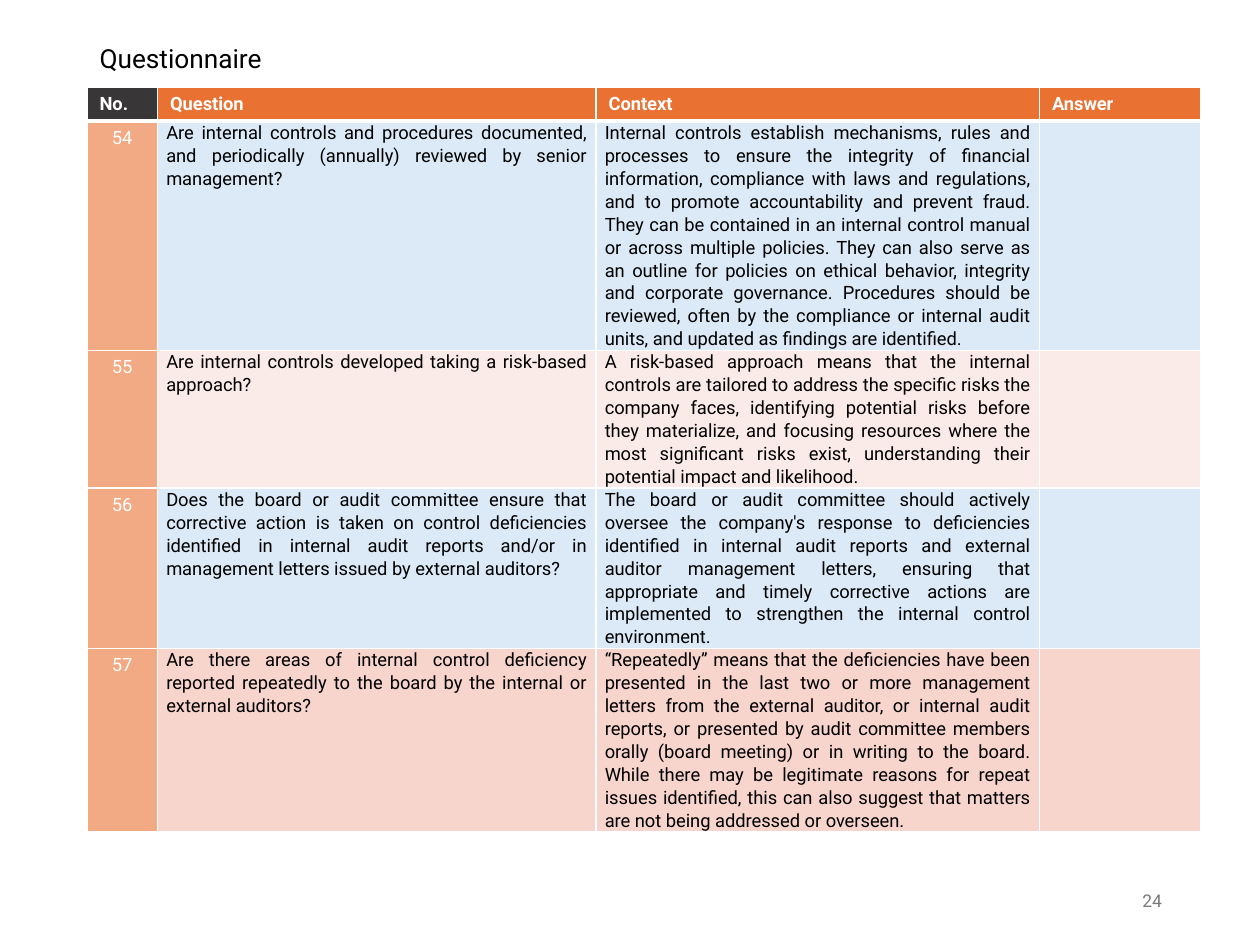
from dataclasses import dataclass

from lxml.etree import SubElement
from pptx import Presentation
from pptx.dml.color import RGBColor
from pptx.enum.text import MSO_ANCHOR as Anchor, PP_ALIGN as Align
from pptx.oxml.ns import qn
from pptx.util import Inches, Pt


@dataclass(frozen=True)
class Theme:
    font: str = "Roboto"
    title_size: float = 15
    table_size: float = 10.5
    page_size: float = 10
    black: str = "000000"
    white: str = "FFFFFF"
    gray: str = "797979"
    dark: str = "393637"
    orange: str = "E97132"
    light_orange: str = "F2AA84"
    blue: str = "DCEAF7"
    pale_rose: str = "FBEBE8"
    rose: str = "F7D5CD"


THEME = Theme()
HEADERS = ["No.", "Question", "Context", "Answer"]
COLUMN_WIDTHS = [0.56, 3.48, 3.52, 1.28]
HEADER_HEIGHT = 0.26

# Number, row height, row colour, question, context
QUESTIONS = [
    (54, 1.82, THEME.blue,
     "Are internal controls and procedures documented, and periodically (annually) "
     "reviewed by senior management?",
     "Internal controls establish mechanisms, rules and processes to ensure the integrity "
     "of financial information, compliance with laws and regulations, and to promote "
     "accountability and prevent fraud. They can be contained in an internal control manual "
     "or across multiple policies. They can also serve as an outline for policies on ethical "
     "behavior, integrity and corporate governance. Procedures should be reviewed, often by "
     "the compliance or internal audit units, and updated as findings are identified."),
    (55, 1.09, THEME.pale_rose,
     "Are internal controls developed taking a risk-based approach?",
     "A risk-based approach means that the internal controls are tailored to address the "
     "specific risks the company faces, identifying potential risks before they materialize, "
     "and focusing resources where the most significant risks exist, understanding their "
     "potential impact and likelihood."),
    (56, 1.27, THEME.blue,
     "Does the board or audit committee ensure that corrective action is taken on control "
     "deficiencies identified in internal audit reports and/or in management letters issued "
     "by external auditors?",
     "The board or audit committee should actively oversee the company's response to "
     "deficiencies identified in internal audit reports and external auditor management "
     "letters, ensuring that appropriate and timely corrective actions are implemented to "
     "strengthen the internal control environment."),
    (57, 1.45, THEME.rose,
     "Are there areas of internal control deficiency reported repeatedly to the board by the "
     "internal or external auditors?",
     "“Repeatedly” means that the deficiencies have been presented in the last two or more "
     "management letters from the external auditor, or internal audit reports, or presented "
     "by audit committee members orally (board meeting) or in writing to the board. While "
     "there may be legitimate reasons for repeat issues identified, this can also suggest "
     "that matters are not being addressed or overseen."),
]


def add_span(para, text, size, color, bold=False):
    span = para.add_run()
    span.text = text
    span.font.name = THEME.font
    span.font.size = Pt(size)
    span.font.bold = bold
    span.font.color.rgb = RGBColor.from_string(color)


def style_cell(cell, fill, bottom_width=1):
    """Give the cell white borders and a solid fill."""
    properties = cell._tc.get_or_add_tcPr()
    for side, width in (("L", 1), ("R", 1), ("T", 1), ("B", bottom_width)):
        line = SubElement(properties, qn(f"a:ln{side}"), w=str(Pt(width)))
        solid = SubElement(line, qn("a:solidFill"))
        SubElement(solid, qn("a:srgbClr"), val=THEME.white)
    cell.fill.solid()
    cell.fill.fore_color.rgb = RGBColor.from_string(fill)


def write_cell(cell, text, color, align=Align.LEFT, bold=False):
    para = cell.text_frame.paragraphs[0]
    para.alignment = align
    add_span(para, text, THEME.table_size, color, bold)
    return para


def write_body_cell(cell, text):
    """Write justified text with tight cell margins."""
    cell.margin_left = cell.margin_right = Inches(0.07)
    cell.margin_top = cell.margin_bottom = 0
    write_cell(cell, text, THEME.black, Align.JUSTIFY).line_spacing = 1.07


def add_title(page, text):
    title = page.shapes.title
    title.left, title.top = Inches(0.69), Inches(0.27)
    title.width, title.height = Inches(8.62), Inches(0.42)
    title.text_frame.vertical_anchor = Anchor.MIDDLE
    para = title.text_frame.paragraphs[0]
    para.alignment = Align.LEFT
    para.line_spacing = 0.9
    add_span(para, text, THEME.title_size, THEME.black)


def add_question_table(page):
    heights = [HEADER_HEIGHT] + [question[1] for question in QUESTIONS]
    table = page.shapes.add_table(
        len(heights), len(HEADERS), Inches(0.69), Inches(0.69),
        Inches(sum(COLUMN_WIDTHS)), Inches(sum(heights))).table
    for column, width in zip(table.columns, COLUMN_WIDTHS):
        column.width = Inches(width)
    for row, height in zip(table.rows, heights):
        row.height = Inches(height)

    for index, header in enumerate(HEADERS):
        cell = table.cell(0, index)
        style_cell(cell, THEME.orange if index else THEME.dark, bottom_width=3)
        write_cell(cell, header, THEME.white, bold=True)

    for row_index, (number, _, fill, question, context) in enumerate(QUESTIONS, start=1):
        cells = [table.cell(row_index, index) for index in range(len(HEADERS))]
        for cell, color in zip(cells, [THEME.light_orange, fill, fill, fill]):
            style_cell(cell, color)
        write_cell(cells[0], str(number), THEME.white, Align.CENTER)
        write_body_cell(cells[1], question)
        write_body_cell(cells[2], context)


def add_page_number(page, number):
    box = page.shapes.add_textbox(Inches(6.58), Inches(6.95), Inches(2.74), Inches(0.4))
    frame = box.text_frame
    frame.word_wrap = True
    frame.vertical_anchor = Anchor.MIDDLE
    para = frame.paragraphs[0]
    para.alignment = Align.RIGHT
    add_span(para, str(number), THEME.page_size, THEME.gray)


def main():
    deck = Presentation()
    deck.slide_width, deck.slide_height = Inches(10), Inches(7.5)
    page = deck.slides.add_slide(deck.slide_layouts[5])
    add_title(page, "Questionnaire")
    add_question_table(page)
    add_page_number(page, 24)
    deck.save("out.pptx")


if __name__ == "__main__":
    main()
